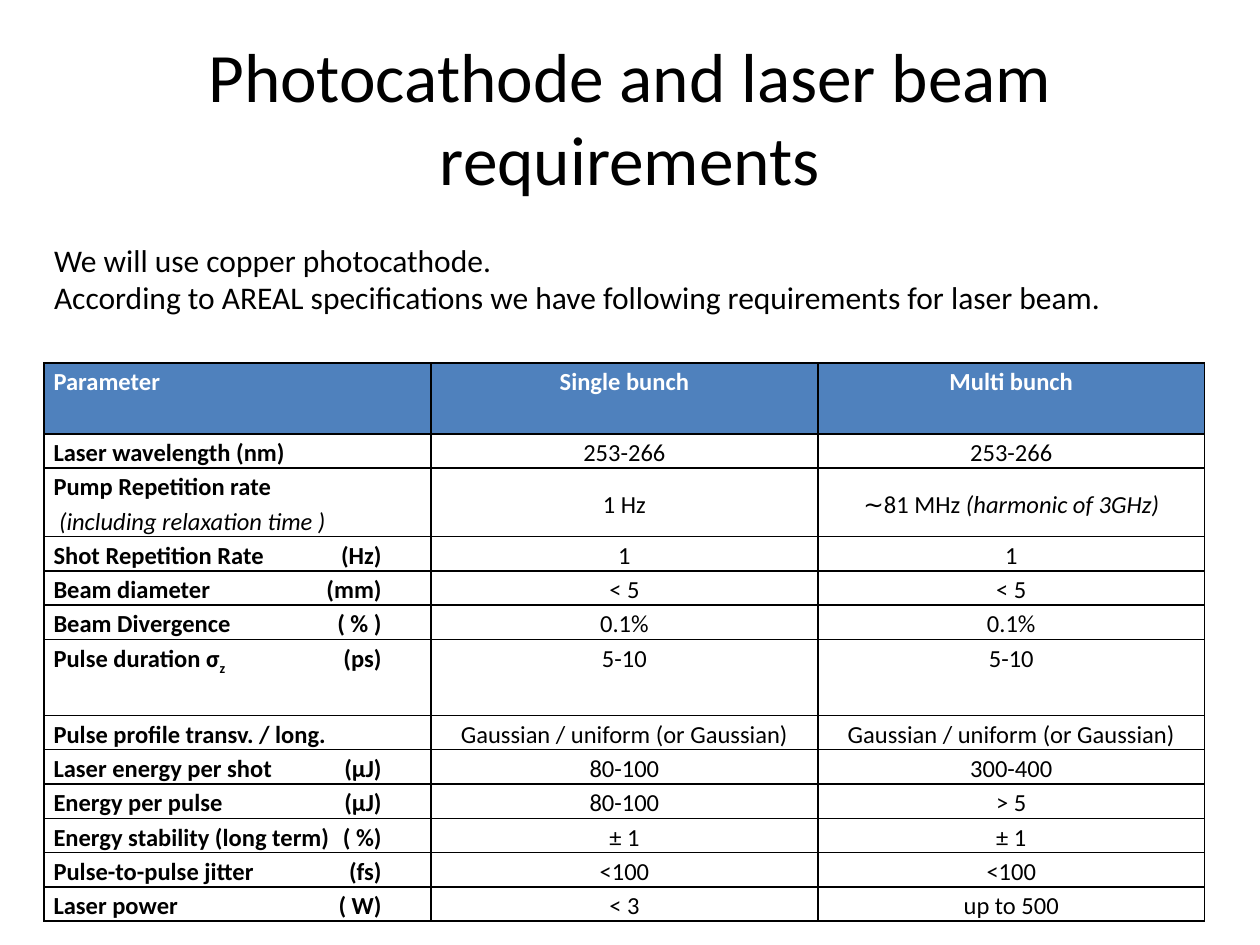
from lxml import etree
from pptx import Presentation
from pptx.dml.color import RGBColor
from pptx.enum.text import MSO_ANCHOR, PP_ALIGN
from pptx.oxml.ns import qn
from pptx.util import Pt

LEFT, CENTER, JUSTIFY = PP_ALIGN.LEFT, PP_ALIGN.CENTER, PP_ALIGN.JUSTIFY
TOP, MIDDLE = MSO_ANCHOR.TOP, MSO_ANCHOR.MIDDLE
FONT = "Calibri"
COLORS = {"ink": "000000", "head": "4F81BD", "light": "FFFFFF"}

HEAD = ["Parameter", "Single bunch", "Multi bunch"]
ROWS = [
    ("Laser wavelength (nm)", "253-266", "253-266"),
    (
        ["Pump Repetition rate", ("\n", ""), (" (including relaxation time )", "italic")],
        "1 Hz",
        ["∼81 MHz ", ("(harmonic of 3GHz)", "italic")],
    ),
    ("Shot Repetition Rate\t(Hz)", "1", "1"),
    ("Beam diameter\t(mm)", "< 5", "< 5"),
    ("Beam Divergence\t( % )", "0.1%", "0.1%"),
    (["Pulse duration σ", ("z", "sub"), "\t(ps)"], "5-10", "5-10"),
    ("Pulse profile transv. / long.",) + ("Gaussian / uniform (or Gaussian)",) * 2,
    ("Laser energy per shot\t(µJ)", "80-100", "300-400"),
    ("Energy per pulse\t(µJ)", "80-100", "> 5"),
    ("Energy stability (long term)\t( %)", "± 1", "± 1"),
    ("Pulse-to-pulse jitter\t(fs)", "<100", "<100"),
    ("Laser power\t( W)", "< 3", "up to 500"),
]
PUMP, PULSE = 2, 6
LINE = 19.6
TALL = {0: 40.5, PUMP: 2 * LINE, PULSE: 43.4}


class Deck:
    def __init__(self, wide, high):
        self.show = Presentation()
        self.show.slide_width, self.show.slide_height = Pt(wide), Pt(high)
        self.slide = self.show.slides.add_slide(self.show.slide_layouts[6])

    def fill(self, par, parts, size, color="ink", bold=False, align=LEFT):
        par.alignment = align
        font = par.font
        font.name, font.size, font.bold = FONT, Pt(size), bold
        font.color.rgb = RGBColor.from_string(COLORS[color])
        for part in [parts] if isinstance(parts, str) else parts:
            text, style = (part, "") if isinstance(part, str) else part
            if text == "\n":
                par.add_line_break()
                continue
            run = par.add_run()
            run.text = text
            if style == "italic":
                run.font.italic, run.font.bold = True, False
            elif style == "sub":
                run._r.get_or_add_rPr().set("baseline", "-25000")

    def text(self, box, lines, size, align=LEFT, anchor=TOP):
        frame = self.slide.shapes.add_textbox(*map(Pt, box)).text_frame
        frame.word_wrap = True
        frame.vertical_anchor = anchor
        for i, line in enumerate(lines):
            par = frame.add_paragraph() if i else frame.paragraphs[0]
            self.fill(par, line, size, align=align)

    def tab(self, par, place):
        props = par._p.get_or_add_pPr()
        stops = etree.Element(qn("a:tabLst"))
        etree.SubElement(stops, qn("a:tab"), pos=str(Pt(place)), algn="r")
        props.find(qn("a:defRPr")).addprevious(stops)

    def border(self, cell):
        props = cell._tc.get_or_add_tcPr()
        for side in "LRTB":
            line = etree.SubElement(props, qn(f"a:ln{side}"), w=str(Pt(1)))
            paint = etree.SubElement(line, qn("a:solidFill"))
            etree.SubElement(paint, qn("a:srgbClr"), val=COLORS["ink"])

    def cell(self, cell, parts, row, col):
        head = row == 0
        cell.margin_left = cell.margin_right = Pt(5.4)
        cell.margin_top = cell.margin_bottom = 0
        cell.vertical_anchor = MIDDLE if row == PUMP and col else TOP
        self.border(cell)
        if head:
            cell.fill.solid()
            cell.fill.fore_color.rgb = RGBColor.from_string(COLORS["head"])
        else:
            cell.fill.background()
        align = CENTER if col else LEFT if row in (1, PUMP) else JUSTIFY
        par = cell.text_frame.paragraphs[0]
        par.line_spacing = 1.15
        self.fill(par, parts, 14, "light" if head else "ink", head or col == 0, align)
        if col == 0:
            self.tab(par, 187.5)

    def table(self, left, top, width, rows):
        highs = [TALL.get(i, LINE) for i in range(len(rows))]
        box = map(Pt, (left, top, width, sum(highs)))
        table = self.slide.shapes.add_table(len(rows), len(rows[0]), *box).table
        table.first_row = table.horz_banding = False
        for row, (high, items) in enumerate(zip(highs, rows)):
            table.rows[row].height = Pt(high)
            for col, parts in enumerate(items):
                self.cell(table.cell(row, col), parts, row, col)


def main():
    deck = Deck(720, 540)
    title = "Photocathode and laser beam requirements"
    deck.text((36, 21.6, 648, 90), [title], 39.6, CENTER, MIDDLE)
    deck.table(25.2, 207.4, 663.3, [HEAD] + ROWS)
    intro = [
        "We will use copper photocathode.",
        "According to AREAL specifications we have following requirements for laser beam.",
    ]
    deck.text((23.8, 133.9, 620, 51), intro, 18)
    deck.show.save("out.pptx")


if __name__ == "__main__":
    main()
